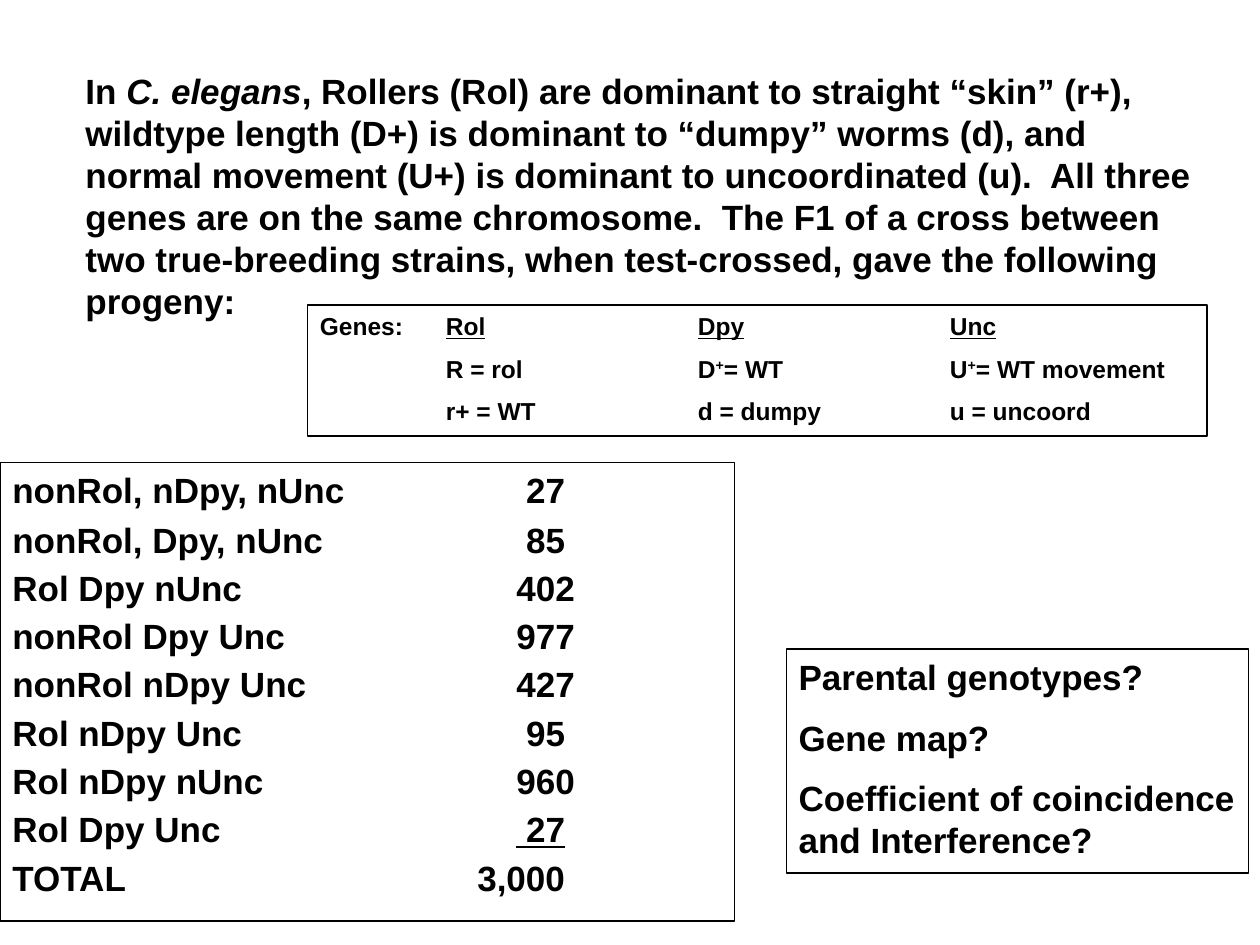
import pptx
import pptx.dml.color
import pptx.enum.shapes
import pptx.enum.text
import pptx.oxml
import pptx.oxml.ns
import pptx.util
from pptx.util import Inches

THEME = {
    "font": "Arial",
    "ink": pptx.dml.color.RGBColor(0, 0, 0),
    "body": 20,
    "small": 14,
    "border": 0.75,
    "gap_ratio": 0.54,
}

# A paragraph is a list of runs; a run is a string or (string, style).
PROBLEM = [[
    "In ", ("C. elegans", "italic"),
    ", Rollers (Rol) are dominant to straight “skin” (r+), wildtype length (D+) "
    "is dominant to “dumpy” worms (d), and normal movement (U+) is dominant to "
    "uncoordinated (u).  All three genes are on the same chromosome.  The F1 of "
    "a cross between two true-breeding strains, when test-crossed, gave the "
    "following progeny:",
]]

PROGENY = [
    ("nonRol, nDpy, nUnc", " 27"),
    ("nonRol, Dpy, nUnc", " 85"),
    ("Rol Dpy nUnc", "402"),
    ("nonRol Dpy Unc", "977"),
    ("nonRol nDpy Unc", "427"),
    ("Rol nDpy Unc", " 95"),
    ("Rol nDpy nUnc", "960"),
    ("Rol Dpy Unc", (" 27", "underline")),
]
TOTAL = ("TOTAL", "3,000")
COUNT_TAB, TOTAL_TAB = 4, 3.69

GENES = [
    ["Genes:\t", ("Rol", "underline"), "\t", ("Dpy", "underline"),
     "\t", ("Unc", "underline")],
    ["\tR = rol\tD", ("+", "superscript"), "= WT\tU", ("+", "superscript"),
     "= WT movement"],
    ["\tr+ = WT\td = dumpy\tu = uncoord"],
]
GENE_TABS = [1, 3, 5]

QUESTIONS = [
    ["Parental genotypes?"],
    ["Gene map?"],
    ["Coefficient of coincidence and Interference?"],
]


def set_tabs(para, stops):
    properties = para._p.get_or_add_pPr()
    tab_list = pptx.oxml.ns.qn("a:tabLst")
    tabs = properties.makeelement(tab_list, {})
    properties.append(tabs)
    for stop in stops:
        attributes = {"pos": str(int(Inches(stop))), "algn": "l"}
        tabs.append(tabs.makeelement(pptx.oxml.ns.qn("a:tab"), attributes))


def write_paragraph(para, runs, size, tabs=(), line_spacing=1.0):
    para.alignment = pptx.enum.text.PP_ALIGN.LEFT
    para.line_spacing = line_spacing
    para.space_before = pptx.util.Pt(size * THEME["gap_ratio"])
    if tabs:
        set_tabs(para, tabs)
    for item in runs:
        text, style = (item, None) if isinstance(item, str) else item
        span = para.add_run()
        span.text = text
        font = span.font
        font.name = THEME["font"]
        font.size = pptx.util.Pt(size)
        font.bold = True
        font.color.rgb = THEME["ink"]
        if style == "superscript":
            font._element.set("baseline", "30000")
        elif style:
            setattr(font, style, True)


def add_box(slide, left, top, width, height, bordered=True):
    """Add an empty, unfilled text area and return its text frame."""
    area = [Inches(length) for length in (left, top, width, height)]
    if bordered:
        rectangle = pptx.enum.shapes.MSO_SHAPE.RECTANGLE
        box = slide.shapes.add_shape(rectangle, *area)
        box.shadow.inherit = False
        box.fill.background()
        box.line.color.rgb = THEME["ink"]
        box.line.width = pptx.util.Pt(THEME["border"])
    else:
        box = slide.shapes.add_textbox(*area)
    frame = box.text_frame
    frame.word_wrap = True
    frame.vertical_anchor = pptx.enum.text.MSO_ANCHOR.TOP
    return frame


def next_paragraph(frame, index):
    return frame.add_paragraph() if index else frame.paragraphs[0]


def write_text(frame, paragraphs, size, tabs=()):
    for index, runs in enumerate(paragraphs):
        write_paragraph(next_paragraph(frame, index), runs, size, tabs=tabs)


def write_progeny(frame):
    for index, (phenotype, count) in enumerate(PROGENY + [TOTAL]):
        is_total = index == len(PROGENY)
        write_paragraph(
            next_paragraph(frame, index), [phenotype + "\t", count], THEME["body"],
            tabs=[TOTAL_TAB if is_total else COUNT_TAB],
            line_spacing=0.7 if index else 1.0)


def main():
    deck = pptx.Presentation()
    deck.slide_width, deck.slide_height = Inches(10), Inches(7.5)
    slide = deck.slides.add_slide(deck.slide_layouts[6])

    problem = add_box(slide, 0.58, 0.5, 9, 2.1, bordered=False)
    write_text(problem, PROBLEM, THEME["body"])
    write_progeny(add_box(slide, 0, 3.67, 5.83, 3.64))
    write_text(add_box(slide, 6.24, 5.15, 3.67, 1.78), QUESTIONS, THEME["body"])
    genes = add_box(slide, 2.44, 2.42, 7.14, 1.04)
    write_text(genes, GENES, THEME["small"], tabs=GENE_TABS)

    deck.save("out.pptx")


if __name__ == "__main__":
    main()
